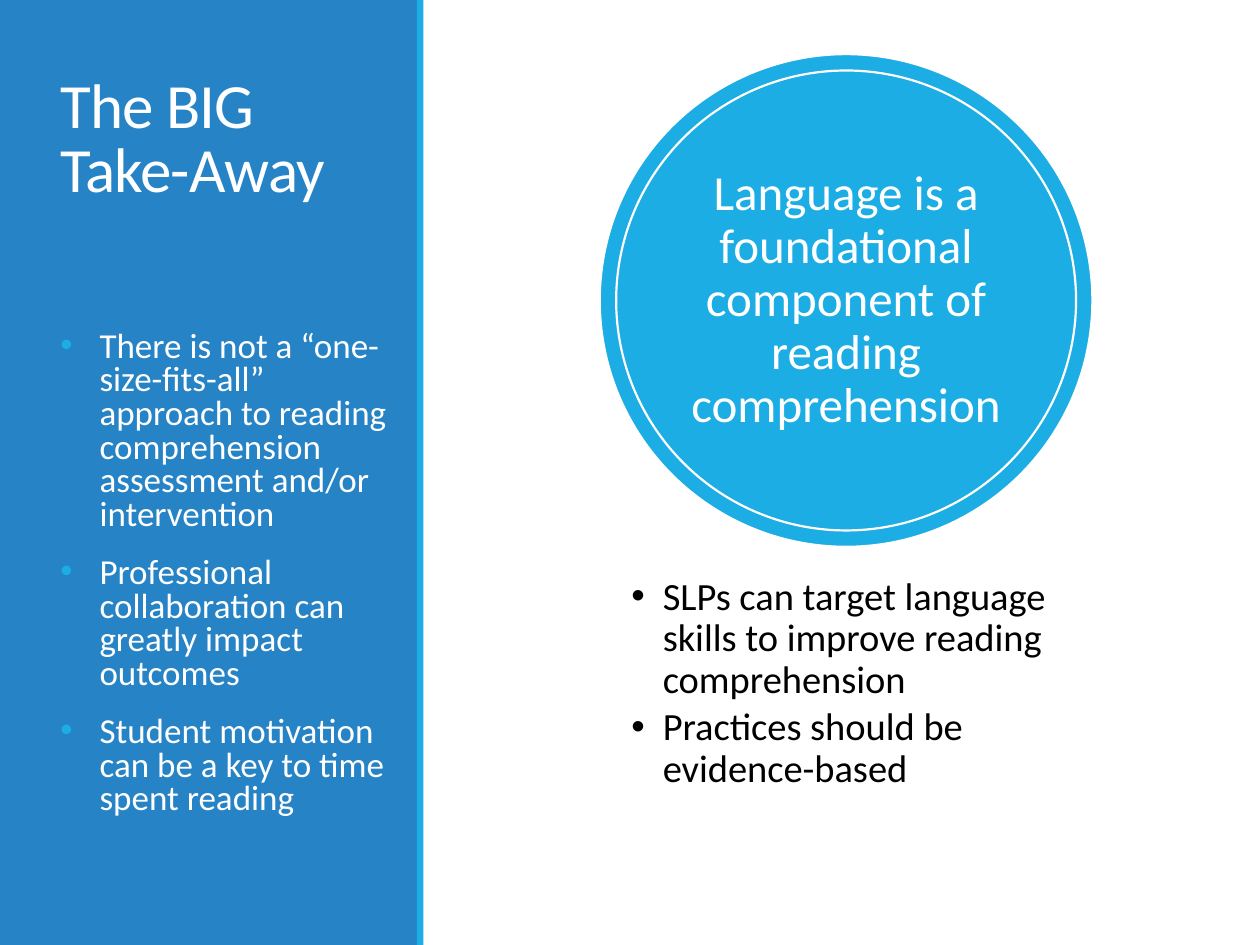
import pptx
import pptx.util
import pptx.dml.color
import pptx.enum.shapes
import pptx.enum.text
import pptx.oxml
import pptx.oxml.ns

Inches = pptx.util.Inches
Pt = pptx.util.Pt
MSO_SHAPE = pptx.enum.shapes.MSO_SHAPE
PP_ALIGN = pptx.enum.text.PP_ALIGN
MSO_ANCHOR = pptx.enum.text.MSO_ANCHOR

COLORS = {"panel": "2683C6", "accent": "1CADE4", "white": "FFFFFF", "black": "000000"}
FONT = "Calibri"


def add_filled_shape(slide, kind, box, color):
    shape = slide.shapes.add_shape(kind, *[Inches(value) for value in box])
    shape.shadow.inherit = False
    shape.fill.solid()
    shape.fill.fore_color.rgb = pptx.dml.color.RGBColor.from_string(COLORS[color])
    shape.line.fill.background()
    return shape


def write_text(shape, box, lines, size, color, spacing, before=0, after=0,
               inset=(0.1, 0.05), anchor=MSO_ANCHOR.TOP, align=PP_ALIGN.LEFT,
               indent=0, bullet_color=None, level=0):
    shape.left, shape.top, shape.width, shape.height = [Inches(value) for value in box]
    frame = shape.text_frame
    frame.word_wrap = True
    frame.auto_size = pptx.enum.text.MSO_AUTO_SIZE.NONE
    frame.vertical_anchor = anchor
    frame.margin_left = frame.margin_right = Inches(inset[0])
    frame.margin_top = frame.margin_bottom = Inches(inset[1])
    frame.text = "\n".join(lines)
    for paragraph in frame.paragraphs:
        paragraph.level = level
        paragraph.alignment = align
        paragraph.line_spacing = spacing
        paragraph.space_before = Pt(before)
        paragraph.space_after = Pt(after)
        if bullet_color:
            properties = paragraph._p.get_or_add_pPr()
            properties.set("marL", str(Inches(indent)))
            properties.set("indent", str(-Inches(indent)))
            namespace = pptx.oxml.ns.nsdecls("a")
            for xml in (
                f'<a:buClr {namespace}><a:srgbClr val="{COLORS[bullet_color]}"/></a:buClr>',
                f'<a:buFont {namespace} typeface="Arial"/>',
                f'<a:buChar {namespace} char="•"/>',
            ):
                properties.append(pptx.oxml.parse_xml(xml))
        paragraph.font.name = FONT
        paragraph.font.size = Pt(size)
        paragraph.font.color.rgb = pptx.dml.color.RGBColor.from_string(COLORS[color])


presentation = pptx.Presentation()
presentation.slide_width = Inches(10)
presentation.slide_height = Inches(7.5)
slide = presentation.slides.add_slide(presentation.slide_layouts[3])
title, left_list, right_list = list(slide.placeholders)[:3]

# Side panel and its edge, behind the text
panel = add_filled_shape(slide, MSO_SHAPE.RECTANGLE, (0, 0, 3.32, 7.5), "panel")
edge = add_filled_shape(slide, MSO_SHAPE.RECTANGLE, (3.31, 0, 0.05, 7.5), "accent")
for position, shape in enumerate((panel, edge), start=2):
    slide.shapes.element.insert(position, shape.element)

# Title
write_text(title, (0.38, -0.82, 2.62, 2.5), ["The BIG Take-Away"], 36, "white", 0.85,
           anchor=MSO_ANCHOR.BOTTOM)
for properties in title.element.iter(pptx.oxml.ns.qn("a:defRPr")):
    properties.set("spc", "-50")

# Side panel list
write_text(left_list, (0.38, 2.58, 2.84, 4.32), [
    "There is not a “one-size-fits-all” approach to reading comprehension "
    "assessment and/or intervention",
    "Professional collaboration can greatly impact outcomes",
    "Student motivation can be a key to time spent reading",
], 20, "white", 0.8, before=12, after=2, indent=0.31, bullet_color="accent")

# Concentric circles with the main message
for left, top, diameter in ((4.76, 0.43, 3.91), (4.89, 0.56, 3.65)):
    circle = add_filled_shape(slide, MSO_SHAPE.OVAL, (left, top, diameter, diameter), "accent")
    circle.line.color.rgb = pptx.dml.color.RGBColor.from_string(COLORS["white"])
    circle.line.width = Pt(1.25)

message_box = [5.41, 1.08, 2.61, 2.61]
message = slide.shapes.add_textbox(*[Inches(value) for value in message_box])
write_text(message, message_box,
           ["Language is a foundational component of reading comprehension"],
           28, "white", 0.9, inset=(0.04, 0.04), anchor=MSO_ANCHOR.MIDDLE,
           align=PP_ALIGN.CENTER)

# List under the circles
write_text(right_list, (4.89, 4.46, 3.65, 2.1), [
    "SLPs can target language skills to improve reading comprehension",
    "Practices should be evidence-based",
], 22, "black", 0.9, after=3.3, inset=(0.12, 0.12), indent=0.25,
    bullet_color="black", level=1)

presentation.save("out.pptx")
